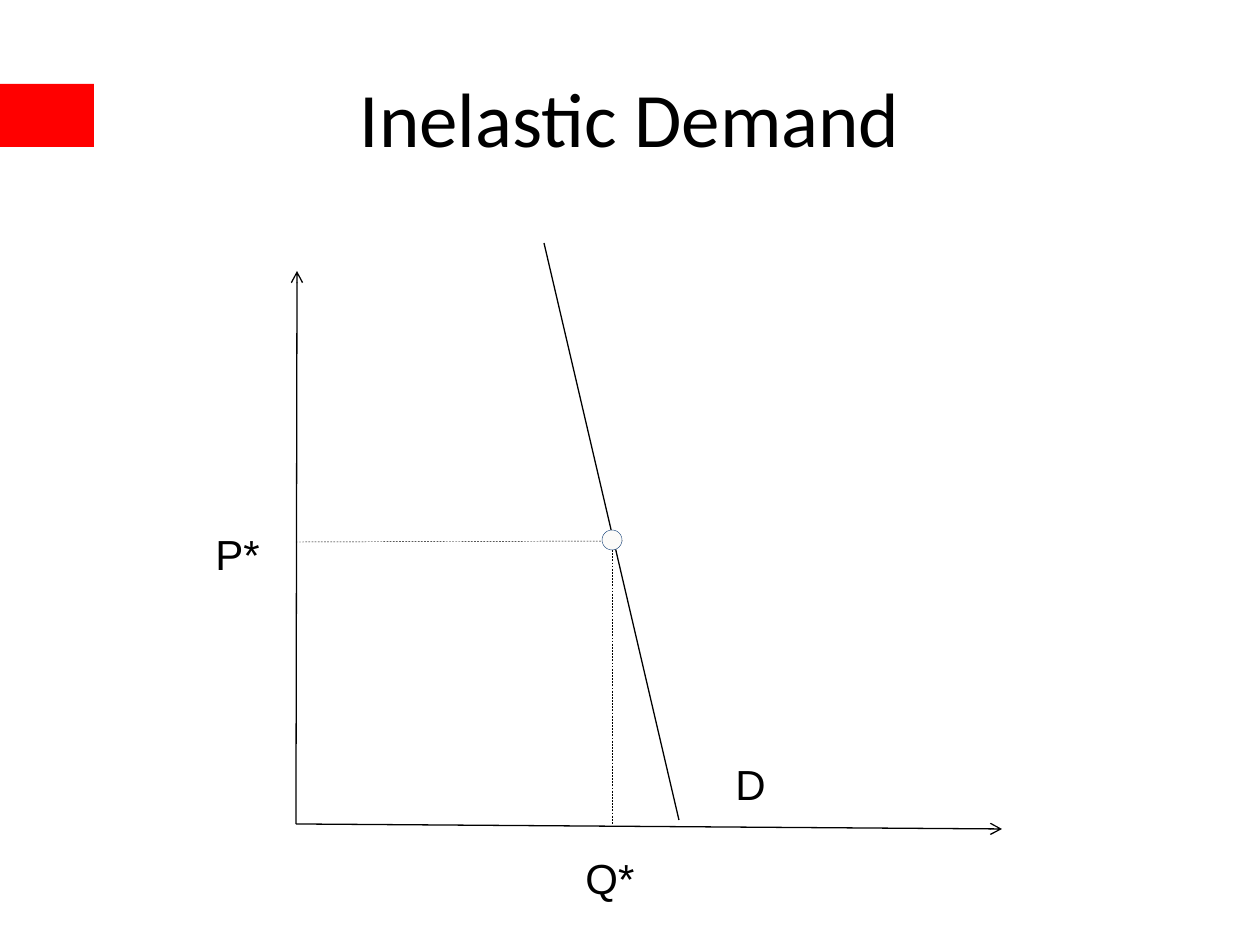
from dataclasses import dataclass

from lxml import etree
from pptx import Presentation
from pptx.dml.color import RGBColor
from pptx.enum.dml import MSO_LINE
from pptx.enum.shapes import MSO_CONNECTOR, MSO_SHAPE
from pptx.enum.text import MSO_ANCHOR, MSO_AUTO_SIZE, PP_ALIGN
from pptx.oxml.ns import qn
from pptx.util import Emu, Pt

RECT, OVAL = MSO_SHAPE.RECTANGLE, MSO_SHAPE.OVAL
STRAIGHT = MSO_CONNECTOR.STRAIGHT
DASH = MSO_LINE.DASH
LEFT, CENTER = PP_ALIGN.LEFT, PP_ALIGN.CENTER
TOP, MIDDLE = MSO_ANCHOR.TOP, MSO_ANCHOR.MIDDLE
FIT = MSO_AUTO_SIZE.SHAPE_TO_FIT_TEXT
NO_FIT = MSO_AUTO_SIZE.NONE
PX = 914400 / 126
BLACK = "000000"


@dataclass
class Line:
    start: tuple[int, int]
    end: tuple[int, int]
    dashed: bool = False
    arrow: bool = False


@dataclass
class Label:
    text: str
    x: int
    y: int
    w: int


ORIGIN = (296, 824)
LINES = [
    Line((612, 547), (612, 825), dashed=True),
    Line((679, 820), (544, 243)),
    Line(ORIGIN, (1002, 829), arrow=True),
    Line(ORIGIN, (297, 271), arrow=True),
    Line((296, 542), (624, 541), dashed=True),
]
LABELS = [
    Label("Q*", 573, 856, 74),
    Label("P*", 203, 532, 71),
    Label("D", 723, 762, 57),
]


def px(n: int) -> Emu:
    return Emu(round(n * PX))


def color(value: str) -> RGBColor:
    return RGBColor.from_string(value)


def write(tf, text: str, *, font: str, size: int, align=LEFT, anchor=TOP,
          wrap=False, fit=FIT, spacing=1.0) -> None:
    tf.word_wrap = wrap
    tf.auto_size = fit
    tf.vertical_anchor = anchor
    p = tf.paragraphs[0]
    p.alignment = align
    p.line_spacing = spacing
    r = p.add_run()
    r.text = text
    r.font.name = font
    r.font.size = Pt(size)
    r.font.color.rgb = color(BLACK)


def add_shape(s, kind, x: int, y: int, w: int, h: int, fill: str, line: str = "") -> None:
    sp = s.shapes.add_shape(kind, px(x), px(y), px(w), px(h))
    sp.shadow.inherit = False
    sp.fill.solid()
    sp.fill.fore_color.rgb = color(fill)
    if line:
        sp.line.color.rgb = color(line)
        sp.line.width = Pt(0.25)
    else:
        sp.line.fill.background()


def add_line(s, line: Line) -> None:
    c = s.shapes.add_connector(STRAIGHT, *map(px, line.start + line.end))
    c.line.color.rgb = color(BLACK)
    c.line.width = Pt(0.25 if line.dashed else 0.75)
    if line.dashed:
        c.line.dash_style = DASH
    if line.arrow:
        etree.SubElement(c.line._get_or_add_ln(), qn("a:tailEnd"), type="arrow")
    etree.SubElement(c._element.spPr, qn("a:effectLst"))


def add_label(s, label: Label) -> None:
    sp = s.shapes.add_textbox(px(label.x), px(label.y), px(label.w), px(53))
    write(sp.text_frame, label.text, font="Arial", size=24, spacing=0.8)


def main() -> None:
    prs = Presentation()
    prs.slide_width, prs.slide_height = px(1260), px(945)
    s = prs.slides.add_slide(prs.slide_layouts[5])
    add_shape(s, RECT, 0, 84, 94, 63, "FF0000")
    title = s.shapes.title
    title.left, title.top, title.width, title.height = map(px, (63, 38, 1134, 158))
    write(title.text_frame, "Inelastic Demand", font="Calibri", size=44,
          align=CENTER, anchor=MIDDLE, wrap=True, fit=NO_FIT)
    for line in LINES:
        add_line(s, line)
    add_shape(s, OVAL, 602, 530, 20, 20, "FCFBF9", "1F497D")
    for label in LABELS:
        add_label(s, label)
    prs.save("out.pptx")


if __name__ == "__main__":
    main()
